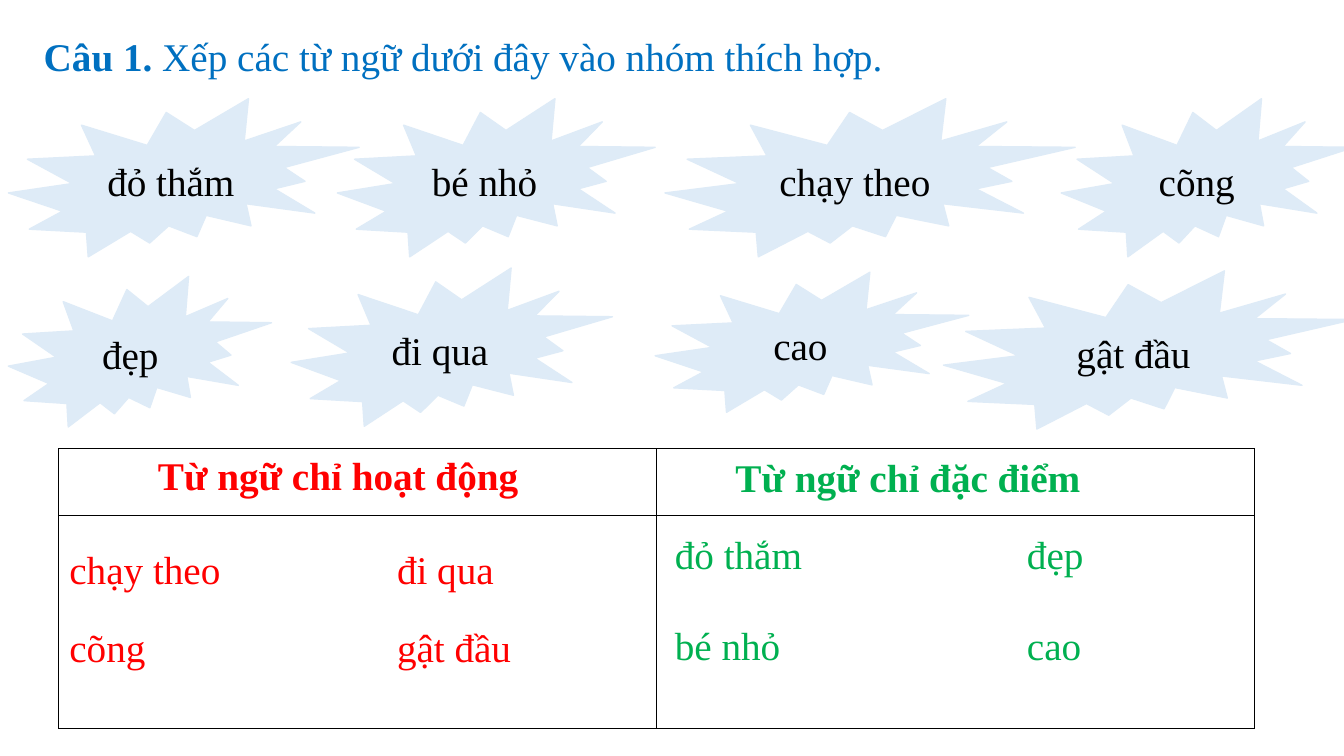
from dataclasses import dataclass
from itertools import product

from lxml import etree
from pptx import Presentation
from pptx import util as u
from pptx.dml.color import RGBColor
from pptx.enum import shapes, text
from pptx.oxml import ns


@dataclass(frozen=True)
class Theme:
    font: str = "Times New Roman"
    size: float = 28
    title: str = "0070C0"
    word: str = "000000"
    burst: str = "DEEBF7"
    border: str = "000000"
    action: str = "FF0000"
    trait: str = "00B050"
    line_width: float = 1


@dataclass(frozen=True)
class Frame:
    left: float
    top: float
    width: float
    height: float

    def lengths(self) -> tuple:
        return tuple(u.Pt(n) for n in (self.left, self.top, self.width, self.height))


@dataclass(frozen=True)
class Burst:
    word: str
    frame: Frame


@dataclass(frozen=True)
class Group:
    heading: str
    frame: Frame
    color: str
    lefts: tuple
    tops: tuple
    words: tuple  # row by row


THEME = Theme()
LINE_HEIGHT = 41
ANSWER_WIDTH = 150.5

BURSTS = (
    Burst("đỏ thắm", Frame(6, 70.5, 250.5, 113)),
    Burst("bé nhỏ", Frame(241, 70.5, 227, 113)),
    Burst("chạy theo", Frame(475, 70.5, 293, 113)),
    Burst("cõng", Frame(758, 70.5, 209, 113)),
    Burst("đẹp", Frame(6, 197.5, 188, 107.5)),
    Burst("đi qua", Frame(208, 191.5, 229.5, 113)),
    Burst("cao", Frame(468, 194.5, 224, 100)),
    Burst("gật đầu", Frame(674, 193.5, 293, 113)),
)

GROUPS = (
    Group("Từ ngữ chỉ hoạt động", Frame(65, 319, 353, LINE_HEIGHT), THEME.action,
          (42.5, 276.5), (386, 442), ("chạy theo", "đi qua", "cõng", "gật đầu")),
    Group("Từ ngữ chỉ đặc điểm", Frame(492.5, 320.5, 312, LINE_HEIGHT), THEME.trait,
          (475, 726.5), (375, 440), ("đỏ thắm", "đẹp", "bé nhỏ", "cao")),
)


def add_span(para, words: str, *, color: str, bold: bool = False) -> None:
    span = para.add_run()
    span.text = words
    span.font.name = THEME.font
    span.font.size = u.Pt(THEME.size)
    span.font.bold = bold
    span.font.color.rgb = RGBColor.from_string(color)


def add_text(page, words: str, frame: Frame, *, color: str, bold: bool = False,
             align=text.PP_ALIGN.LEFT) -> None:
    box = page.shapes.add_textbox(*frame.lengths())
    box.text_frame.word_wrap = True
    para = box.text_frame.paragraphs[0]
    para.alignment = align
    add_span(para, words, color=color, bold=bold)


def add_title(page) -> None:
    box = page.shapes.title
    box.left, box.top, box.width, box.height = Frame(24, 19.5, 744, LINE_HEIGHT).lengths()
    box.text_frame.vertical_anchor = text.MSO_ANCHOR.TOP
    box.text_frame.auto_size = text.MSO_AUTO_SIZE.NONE
    para = box.text_frame.paragraphs[0]
    para.alignment = text.PP_ALIGN.LEFT
    add_span(para, "Câu 1. ", color=THEME.title, bold=True)
    add_span(para, "Xếp các từ ngữ dưới đây vào nhóm thích hợp.", color=THEME.title)


def add_burst(page, burst: Burst) -> None:
    shape = page.shapes.add_shape(shapes.MSO_SHAPE.EXPLOSION2, *burst.frame.lengths())
    shape.shadow.inherit = False
    shape.fill.solid()
    shape.fill.fore_color.rgb = RGBColor.from_string(THEME.burst)
    shape.line.color.rgb = RGBColor.from_string(THEME.burst)
    shape.line.width = u.Pt(THEME.line_width)
    shape.text_frame.word_wrap = True
    shape.text_frame.vertical_anchor = text.MSO_ANCHOR.MIDDLE
    para = shape.text_frame.paragraphs[0]
    para.alignment = text.PP_ALIGN.CENTER
    add_span(para, burst.word, color=THEME.word)


def add_borders(cell) -> None:
    properties = cell._tc.get_or_add_tcPr()
    for position, side in enumerate(("lnL", "lnR", "lnT", "lnB")):
        line = etree.Element(ns.qn(f"a:{side}"), w=str(u.Pt(THEME.line_width)))
        fill = etree.SubElement(line, ns.qn("a:solidFill"))
        etree.SubElement(fill, ns.qn("a:srgbClr"), val=THEME.border)
        properties.insert(position, line)


def add_grid(page) -> None:
    table = page.shapes.add_table(2, 2, *Frame(42, 320.5, 854, 200).lengths()).table
    table.first_row = table.horz_banding = False
    for row, height in zip(table.rows, (47.5, 152.5)):
        row.height = u.Pt(height)
    for cell in table.iter_cells():
        cell.fill.background()
        add_borders(cell)


def add_group(page, group: Group) -> None:
    add_text(page, group.heading, group.frame, color=group.color, bold=True,
             align=text.PP_ALIGN.CENTER)
    for word, (top, left) in zip(group.words, product(group.tops, group.lefts)):
        add_text(page, word, Frame(left, top, ANSWER_WIDTH, LINE_HEIGHT), color=group.color)


def main() -> None:
    deck = Presentation()
    deck.slide_width, deck.slide_height = u.Pt(960), u.Pt(540)
    page = deck.slides.add_slide(deck.slide_layouts[5])

    # Question and the words to sort
    add_title(page)
    for burst in BURSTS:
        add_burst(page, burst)

    # Sorted answers
    add_grid(page)
    for group in GROUPS:
        add_group(page, group)

    deck.save("out.pptx")


if __name__ == "__main__":
    main()
